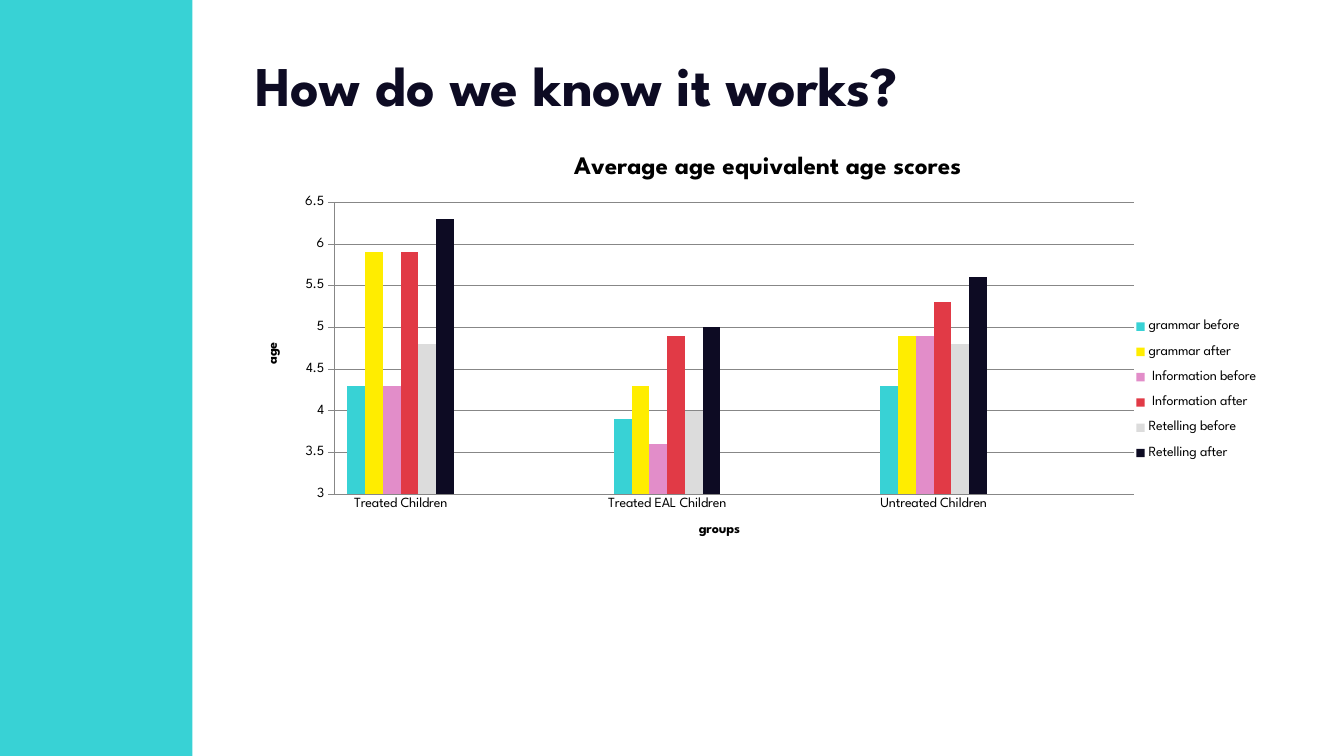
import pptx
import pptx.chart.data
import pptx.dml.color
import pptx.enum.chart
import pptx.enum.shapes
import pptx.enum.text
import pptx.oxml
import pptx.oxml.ns
import pptx.util
from pptx.util import Cm

FONT = "League Spartan"
COLOURS = {"turquoise": "38D2D5", "yellow": "FFED00", "pink": "E28DC9", "red": "E13A46",
           "grey": "DCDCDC", "navy": "0D0B23", "black": "000000", "axis": "878787"}
CATEGORIES = ["Treated Children", "", "Treated EAL Children", "", "Untreated Children", ""]
SERIES = [
    ("grammar before", "turquoise", (4.3, 3.9, 4.3)),
    ("grammar after", "yellow", (5.9, 4.3, 4.9)),
    (" Information before", "pink", (4.3, 3.6, 4.9)),
    (" Information after", "red", (5.9, 4.9, 5.3)),
    ("Retelling before", "grey", (4.8, 4, 4.8)),
    ("Retelling after", "navy", (6.3, 5, 5.6)),
]


def colour(name):
    """Return the named colour."""
    return pptx.dml.color.RGBColor.from_string(COLOURS[name])


def set_values(target, values):
    """Set each attribute of the target from a dict."""
    for name, value in values.items():
        setattr(target, name, value)


def format_font(font, size, bold, colour_name):
    """Apply the slide's typeface with a size, weight and colour."""
    set_values(font, {"name": FONT, "size": pptx.util.Pt(size), "bold": bold})
    font.color.rgb = colour(colour_name)


def add_side_band(slide, left, top, width, height):
    """Draw the coloured band inside the given box."""
    band = slide.shapes.add_shape(pptx.enum.shapes.MSO_SHAPE.RECTANGLE, left, top, width, height)
    band.shadow.inherit = False
    band.fill.solid()
    band.fill.fore_color.rgb = colour("turquoise")
    band.line.fill.background()


def add_title(slide, left, top, width, height):
    """Place and format the title placeholder."""
    title = slide.shapes.title
    set_values(title, {"left": left, "top": top, "width": width, "height": height})
    set_values(title.text_frame, {
        "text": "How do we know it works?", "word_wrap": True,
        "auto_size": pptx.enum.text.MSO_AUTO_SIZE.NONE,
        "vertical_anchor": pptx.enum.text.MSO_ANCHOR.TOP})
    paragraph = title.text_frame.paragraphs[0]
    set_values(paragraph, {"alignment": pptx.enum.text.PP_ALIGN.LEFT, "line_spacing": 0.9})
    format_font(paragraph.font, 40, True, "navy")


def set_layout(element, index, box, inner=False):
    """Fix a chart part to fractions of the chart area."""
    for existing in element.findall(pptx.oxml.ns.qn("c:layout")):
        element.remove(existing)
    target = '<c:layoutTarget val="inner"/>' if inner else ""
    modes = '<c:xMode val="edge"/><c:yMode val="edge"/>'
    sizes = "".join(f'<c:{key} val="{value}"/>' for key, value in zip("xywh", box))
    element.insert(index, pptx.oxml.parse_xml(
        f'<c:layout {pptx.oxml.ns.nsdecls("c")}><c:manualLayout>'
        f'{target}{modes}{sizes}</c:manualLayout></c:layout>'))


def set_heading(owner, text, size):
    """Give a chart or an axis a bold title."""
    owner.has_title = True
    frame = (owner.chart_title if hasattr(owner, "chart_title") else owner.axis_title).text_frame
    frame.text = text
    format_font(frame.paragraphs[0].runs[0].font, size, True, "black")


def format_axis(axis, text, tick_mark):
    """Format one axis with its title and tick marks."""
    set_heading(axis, text, 10)
    set_values(axis, {"major_tick_mark": tick_mark,
                      "minor_tick_mark": pptx.enum.chart.XL_TICK_MARK.NONE})
    format_font(axis.tick_labels.font, 10, False, "black")
    axis.format.line.color.rgb = colour("axis")
    axis.format.line.width = pptx.util.Pt(0.75)


def add_score_chart(slide, left, top, width, height):
    """Add the column chart of scores inside the given box."""
    data = pptx.chart.data.CategoryChartData()
    data.categories = CATEGORIES
    for name, _, scores in SERIES:
        data.add_series(name, [value for score in scores for value in (score, None)])
    chart = slide.shapes.add_chart(pptx.enum.chart.XL_CHART_TYPE.COLUMN_CLUSTERED,
                                   left, top, width, height, data).chart
    format_font(chart.font, 10, False, "black")
    set_heading(chart, "Average age equivalent age scores", 18)
    chart.chart_title.include_in_layout = False

    plot = chart.plots[0]
    set_values(plot, {"gap_width": 150, "overlap": 0, "vary_by_categories": False})
    for series, (_, colour_name, _) in zip(plot.series, SERIES):
        series.invert_if_negative = False
        series.format.fill.solid()
        series.format.fill.fore_color.rgb = colour(colour_name)

    ticks = pptx.enum.chart.XL_TICK_MARK
    format_axis(chart.category_axis, "groups", ticks.NONE)
    axis = chart.value_axis
    format_axis(axis, "age", ticks.OUTSIDE)
    set_values(axis, {"minimum_scale": 3, "maximum_scale": 6.5, "major_unit": 0.5,
                      "has_major_gridlines": True})
    axis.major_gridlines.format.line.color.rgb = colour("axis")
    axis.major_gridlines.format.line.width = pptx.util.Pt(0.75)

    chart.has_legend = True
    set_values(chart.legend, {"position": pptx.enum.chart.XL_LEGEND_POSITION.RIGHT,
                              "include_in_layout": False})
    format_font(chart.legend.font, 10, False, "black")
    plot_area = chart.element.find(".//" + pptx.oxml.ns.qn("c:plotArea"))
    legend = chart.element.find(".//" + pptx.oxml.ns.qn("c:legend"))
    set_layout(plot_area, 0, (0.085, 0.16, 0.765, 0.693), inner=True)
    set_layout(legend, 1, (0.84, 0.41, 0.14, 0.39))


def main():
    """Build and save the slide."""
    presentation = pptx.Presentation()
    set_values(presentation, {"slide_width": Cm(33.87), "slide_height": Cm(19.05)})
    slide = presentation.slides.add_slide(presentation.slide_layouts[5])
    content_left = Cm(6.18)
    add_side_band(slide, 0, 0, Cm(4.85), presentation.slide_height)
    add_title(slide, content_left, Cm(1.35), Cm(22.53), Cm(2.06))
    add_score_chart(slide, content_left, Cm(3.4), Cm(26.34), Cm(10.62))
    presentation.save("out.pptx")


if __name__ == "__main__":
    main()
